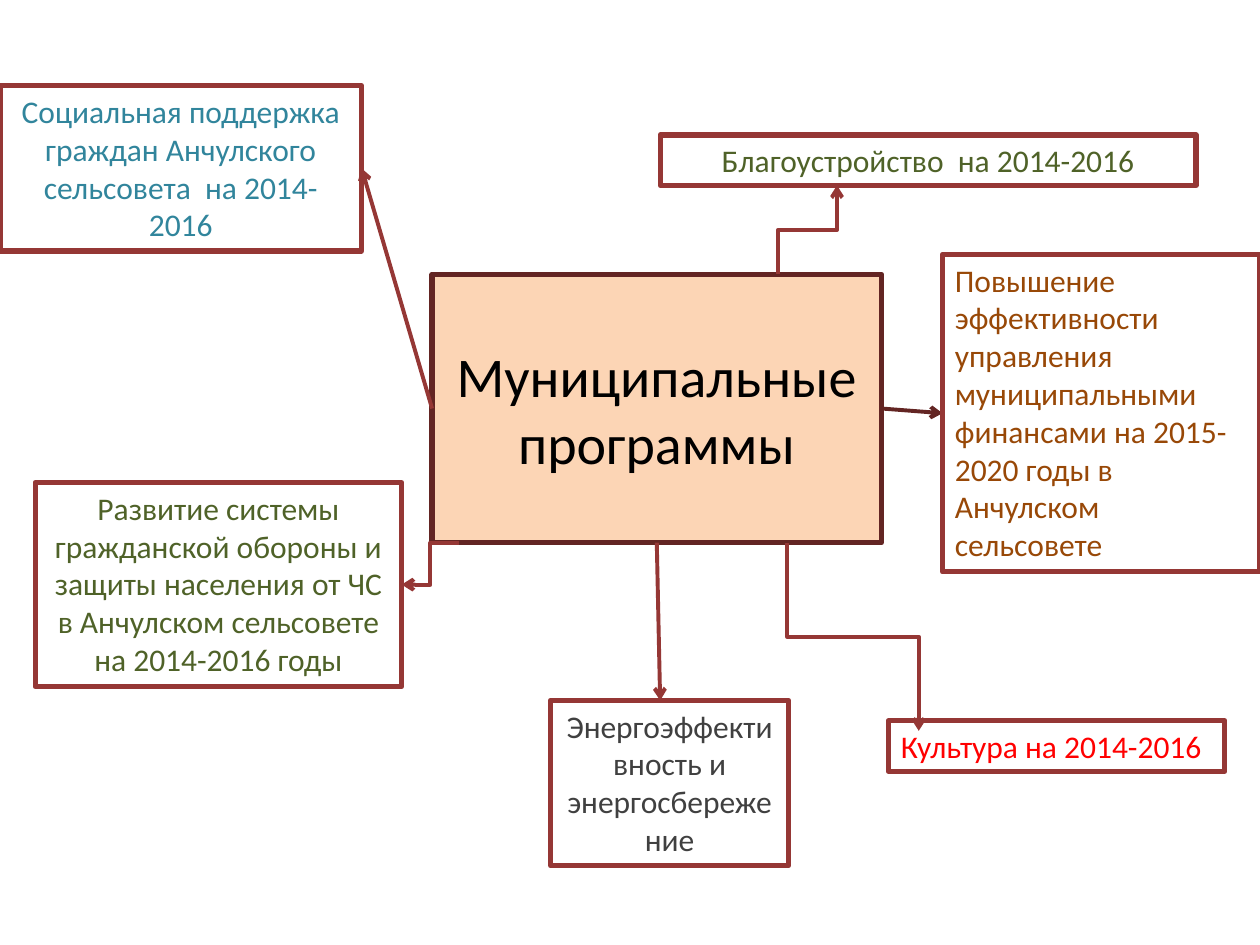
import collections
import dataclasses

import lxml.etree
import pptx
import pptx.dml.color
import pptx.enum.shapes
import pptx.enum.text
import pptx.oxml.ns
import pptx.util

Cm = pptx.util.Cm
ALIGN = pptx.enum.text.PP_ALIGN
ANCHOR = pptx.enum.text.MSO_ANCHOR
LINK = pptx.enum.shapes.MSO_CONNECTOR
Box = collections.namedtuple("Box", "left top width height")
Branch = collections.namedtuple("Branch", "box text color align start end route line")


@dataclasses.dataclass(frozen=True)
class Theme:
    font: str = "Calibri"
    title_size: int = 32
    body_size: int = 18
    box_line: float = 3
    link_line: float = 2.25
    black: str = "000000"
    peach: str = "FCD5B5"
    dark_red: str = "632523"
    red_brown: str = "953735"
    green: str = "4F6228"
    grey: str = "404040"
    red: str = "FF0000"
    teal: str = "31859C"
    orange: str = "984807"


T = Theme()
HUB = Box(8.71, 5.53, 9.06, 5.41)

# Each start is a fraction of the hub box, each end a fraction of the branch box
BRANCHES = [
    Branch(Box(13.31, 2.72, 10.8, 1.02), "Благоустройство  на 2014-2016",
           T.green, ALIGN.CENTER, (0.77, 0), (0.33, 1), "vertical", T.red_brown),
    Branch(Box(0.71, 9.73, 7.39, 4.11),
           "Развитие системы гражданской обороны и защиты населения от ЧС "
           "в Анчулском сельсовете на 2014-2016 годы",
           T.green, ALIGN.CENTER, (0.06, 1), (1, 0.5), "horizontal", T.red_brown),
    Branch(Box(17.91, 14.53, 6.78, 1.02), "Культура на 2014-2016",
           T.red, ALIGN.LEFT, (0.79, 1), (0.09, 0.2), "vertical", T.red_brown),
    Branch(Box(11.1, 14.12, 4.8, 3.33), "Энергоэффективность и энергосбережение",
           T.grey, ALIGN.CENTER, (0.5, 1), (0.46, 0), "straight", T.red_brown),
    Branch(Box(0, 1.73, 7.29, 3.33),
           "Социальная поддержка граждан Анчулского сельсовета  на 2014-2016",
           T.teal, ALIGN.CENTER, (0, 0.5), (1, 0.5), "straight", T.red_brown),
    Branch(Box(19, 5.13, 6.4, 6.4),
           "Повышение эффективности управления муниципальными финансами "
           "на 2015-2020 годы в Анчулском сельсовете",
           T.orange, ALIGN.LEFT, (1, 0.5), (0, 0.5), "straight", T.dark_red),
]


def set_all(obj, values):
    for name, value in values.items():
        setattr(obj, name, value)


def rgb(color):
    return pptx.dml.color.RGBColor.from_string(color)


def point(box, fraction):
    return (box.left + box.width * fraction[0], box.top + box.height * fraction[1])


def add_box(s, box, text, color, size, align, anchor, line, fill=None):
    sp = s.shapes.add_shape(pptx.enum.shapes.MSO_SHAPE.RECTANGLE, *map(Cm, box))
    sp.shadow.inherit = False
    if fill:
        sp.fill.solid()
        sp.fill.fore_color.rgb = rgb(fill)
    else:
        sp.fill.background()
    sp.line.color.rgb = rgb(line)
    sp.line.width = pptx.util.Pt(T.box_line)
    tf = sp.text_frame
    set_all(tf, {"word_wrap": True, "vertical_anchor": anchor})
    p = tf.paragraphs[0]
    p.alignment = align
    r = p.add_run()
    r.text = text
    set_all(r.font, {"name": T.font, "size": pptx.util.Pt(size)})
    r.font.color.rgb = rgb(color)


def add_link(s, start, end, route, color):
    (x1, y1), (x2, y2) = start, end
    kind = LINK.STRAIGHT if route == "straight" else LINK.ELBOW
    rotation = 0
    if route == "vertical":
        # A quarter turn about the centre makes the elbow leave vertically
        cx, cy = (x1 + x2) / 2, (y1 + y2) / 2
        half_w, half_h = abs(y2 - y1) / 2, (x2 - x1) / 2
        up = y2 < y1
        rotation = 90 if up else 270
        if up:
            half_h = -half_h
        x1, x2 = cx + half_w, cx - half_w
        y1, y2 = cy - half_h, cy + half_h
    link = s.shapes.add_connector(kind, *map(Cm, (x1, y1, x2, y2)))
    link.line.color.rgb = rgb(color)
    link.line.width = pptx.util.Pt(T.link_line)
    qn = pptx.oxml.ns.qn
    sp_pr = link._element.spPr
    if rotation:
        sp_pr.find(qn("a:xfrm")).set("rot", str(rotation * 60000))
    lxml.etree.SubElement(sp_pr.find(qn("a:ln")), qn("a:tailEnd"), type="arrow")
    lxml.etree.SubElement(sp_pr, qn("a:effectLst"))


def add_hub(s, box):
    add_box(s, box, "Муниципальные программы", T.black, T.title_size,
            ALIGN.CENTER, ANCHOR.MIDDLE, T.dark_red, T.peach)


def add_branch(s, hub, branch):
    add_link(s, point(hub, branch.start), point(branch.box, branch.end),
             branch.route, branch.line)
    add_box(s, branch.box, branch.text, branch.color, T.body_size,
            branch.align, ANCHOR.TOP, T.red_brown)


def main():
    prs = pptx.Presentation()
    set_all(prs, {"slide_width": Cm(25.4), "slide_height": Cm(19.05)})
    s = prs.slides.add_slide(prs.slide_layouts[6])
    # Central title
    add_hub(s, HUB)
    # Programmes around it
    for branch in BRANCHES:
        add_branch(s, HUB, branch)
    prs.save("out.pptx")


if __name__ == "__main__":
    main()
